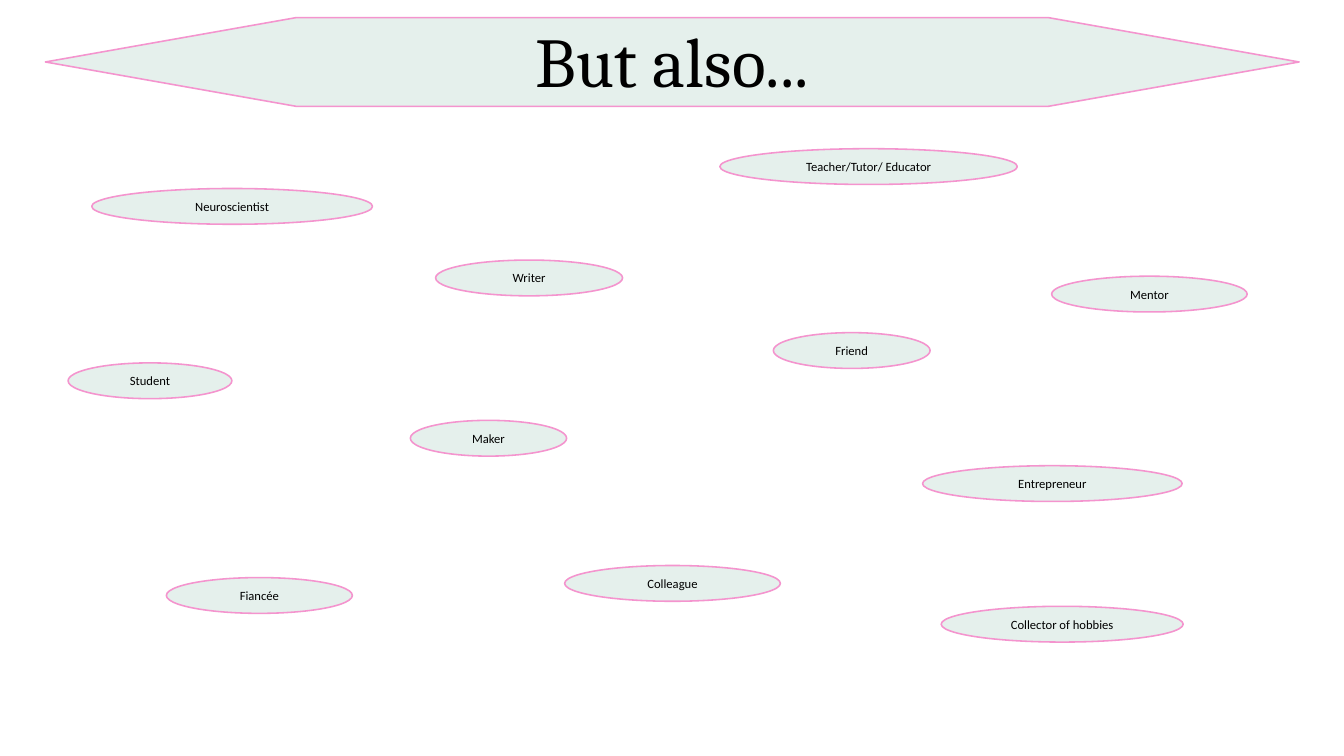
import pptx
import pptx.util
from pptx.dml.color import RGBColor
from pptx.enum.shapes import MSO_SHAPE
from pptx.enum.text import MSO_ANCHOR, MSO_AUTO_SIZE, PP_ALIGN

# Content: label, left, top, width (px, 100 to the inch)
TITLE = "But also..."
ROLES = [
    ("Writer", 864, 516, 371),
    ("Neuroscientist", 182, 374, 557),
    ("Teacher/Tutor/ Educator", 1428, 295, 590),
    ("Mentor", 2086, 548, 388),
    ("Student", 135, 720, 325),
    ("Collector of hobbies", 1867, 1203, 480),
    ("Friend", 1534, 660, 311),
    ("Entrepreneur", 1830, 924, 515),
    ("Colleague", 1120, 1122, 428),
    ("Fiancée", 330, 1146, 369),
    ("Maker", 814, 834, 310),
]
ROLE_HEIGHT = 71
COLORS = {"fill": "E5F0EC", "line": "F494CE", "text": "000000"}


def px(n):
    return pptx.util.Inches(n / 100)


def add_outlined(s, kind, left, top, width, height):
    sp = s.shapes.add_shape(kind, px(left), px(top), px(width), px(height))
    sp.shadow.inherit = False
    sp.fill.solid()
    sp.fill.fore_color.rgb = RGBColor.from_string(COLORS["fill"])
    sp.line.color.rgb = RGBColor.from_string(COLORS["line"])
    sp.line.width = pptx.util.Pt(2.25)
    return sp


def set_text(sp, text, font, size, inset_x, inset_y):
    tf = sp.text_frame
    tf.text = text
    tf.word_wrap = True
    tf.auto_size = MSO_AUTO_SIZE.SHAPE_TO_FIT_TEXT
    tf.vertical_anchor = MSO_ANCHOR.MIDDLE
    tf.margin_left = tf.margin_right = px(inset_x)
    tf.margin_top = tf.margin_bottom = px(inset_y)
    p = tf.paragraphs[0]
    p.alignment = PP_ALIGN.CENTER
    r = p.runs[0]
    r.font.name = font
    r.font.size = pptx.util.Pt(size)
    r.font.color.rgb = RGBColor.from_string(COLORS["text"])


prs = pptx.Presentation()
prs.slide_width, prs.slide_height = px(2666), px(1500)
s = prs.slides.add_slide(prs.slide_layouts[5])

# Title on its banner
title = s.shapes.title
title.left, title.top, title.width, title.height = px(945), px(35), px(778), px(168)
set_text(title, TITLE, "Cambria", 100, 0, 0)
banner = add_outlined(s, MSO_SHAPE.FLOWCHART_PREPARATION, 90, 35, 2487, 176)
title._element.addprevious(banner._element)

# Scattered roles
for label, left, top, width in ROLES:
    role = add_outlined(s, MSO_SHAPE.OVAL, left, top, width, ROLE_HEIGHT)
    set_text(role, label, "Calibri", 18, 20, 10)

prs.save("out.pptx")
